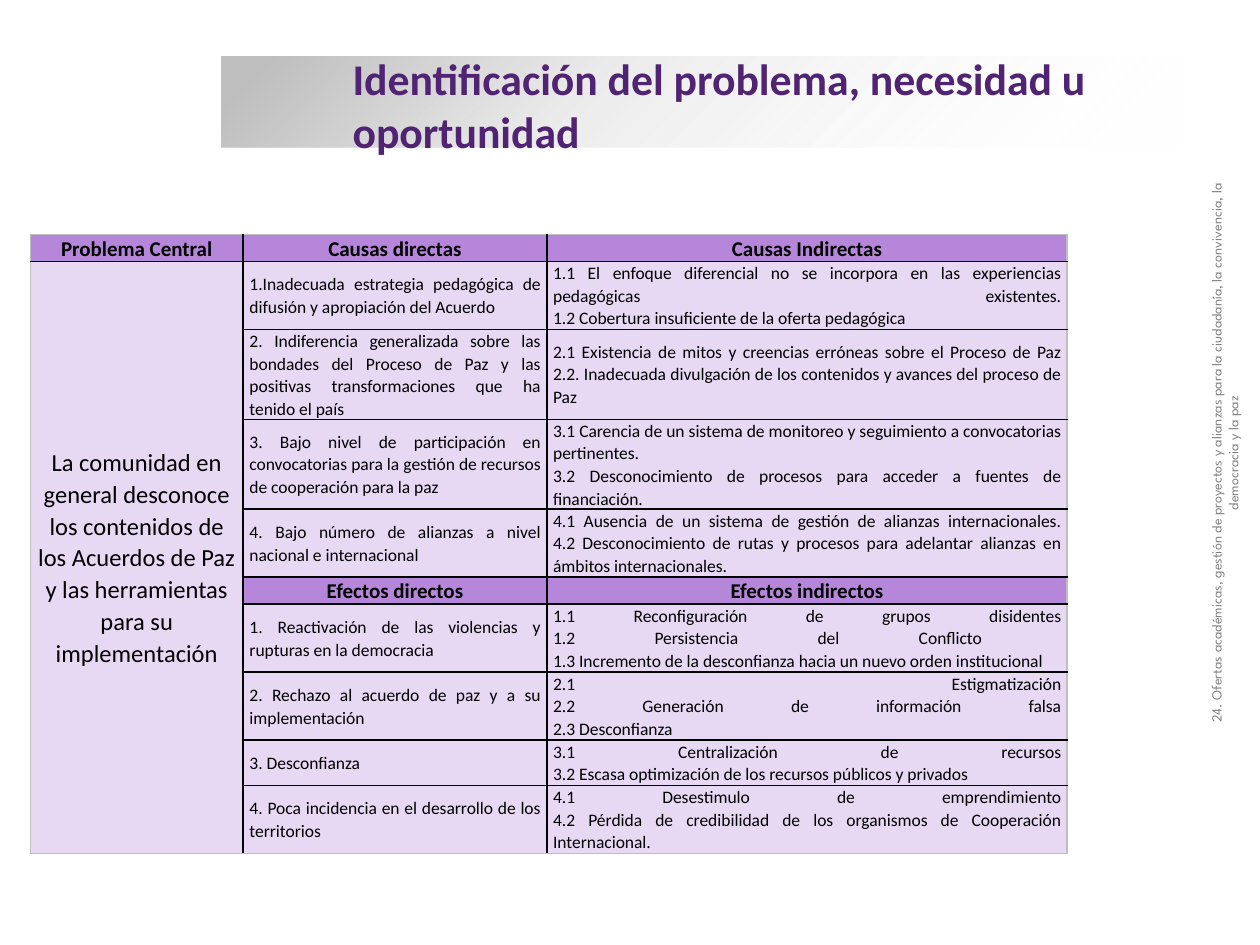
import pptx
import pptx.dml.color
import pptx.enum.shapes
import pptx.enum.text
import pptx.oxml
import pptx.oxml.ns
import pptx.util
from pptx.util import Inches

RGBColor = pptx.dml.color.RGBColor
PURPLE = RGBColor(0x51, 0x23, 0x73)
HEADER_FILL = RGBColor(0xB6, 0x86, 0xDA)
BODY_FILL = RGBColor(0xE7, 0xD8, 0xF4)
GRAY = RGBColor(0x80, 0x80, 0x80)
EDGE = RGBColor(0xBF, 0xBF, 0xBF)
BLACK = RGBColor(0, 0, 0)
WHITE = RGBColor(0xFF, 0xFF, 0xFF)
CENTER = pptx.enum.text.PP_ALIGN.CENTER
JUSTIFY = pptx.enum.text.PP_ALIGN.JUSTIFY
MIDDLE = pptx.enum.text.MSO_ANCHOR.MIDDLE
NAMESPACE = pptx.oxml.ns.nsdecls("a")


def style_font(paragraph, size, color, name="Calibri", bold=False):
    paragraph.font.size = pptx.util.Pt(size)
    paragraph.font.name = name
    paragraph.font.bold = bold
    paragraph.font.color.rgb = color


def add_border(cell, side, color):
    # Borders must come before the fill in the cell properties
    cell._tc.get_or_add_tcPr().append(pptx.oxml.parse_xml(
        f'<a:{side} {NAMESPACE} w="12700"><a:solidFill><a:srgbClr val="{color}"/>'
        f'</a:solidFill></a:{side}>'))


presentation = pptx.Presentation()
presentation.slide_width = Inches(10)
presentation.slide_height = Inches(7.5)
slide = presentation.slides.add_slide(presentation.slide_layouts[6])

# Title band, fading from gray to transparent white
band = slide.shapes.add_shape(
    pptx.enum.shapes.MSO_SHAPE.RECTANGLE,
    Inches(1.76), Inches(0.45), Inches(7.61), Inches(0.72))
band.shadow.inherit = False
band.line.fill.background()
stops = "".join(
    f'<a:gs pos="{position * 1000}"><a:srgbClr val="{color}">'
    f'<a:alpha val="{alpha * 1000}"/></a:srgbClr></a:gs>'
    for position, color, alpha in [(5, EDGE, 100), (37, EDGE, 31), (100, WHITE, 0)])
band._element.spPr.find(pptx.oxml.ns.qn("a:prstGeom")).addnext(pptx.oxml.parse_xml(
    f'<a:gradFill {NAMESPACE} rotWithShape="1"><a:gsLst>{stops}</a:gsLst>'
    '<a:lin ang="2700000" scaled="0"/></a:gradFill>'))

# Title
title = slide.shapes.add_textbox(Inches(2.7), Inches(0.34), Inches(6.75), Inches(0.98))
title.text_frame.word_wrap = True
title.text_frame.vertical_anchor = MIDDLE
paragraph = title.text_frame.paragraphs[0]
paragraph.text = "Identificación del problema, necesidad u oportunidad"
style_font(paragraph, 25, PURPLE, bold=True)

# Table of problem, causes and effects
HEADER_ROWS = (0, 5)
rows = [
    ("Causas directas", "Causas Indirectas"),
    ("1.Inadecuada estrategia pedagógica de difusión y apropiación del Acuerdo",
     "1.1 El enfoque diferencial no se incorpora en las experiencias pedagógicas existentes.\v"
     "1.2 Cobertura insuficiente de la oferta pedagógica"),
    ("2. Indiferencia generalizada sobre las bondades del Proceso de Paz y las positivas "
     "transformaciones que ha tenido el país",
     "2.1 Existencia de mitos y creencias erróneas sobre el Proceso de Paz\v"
     "2.2. Inadecuada divulgación de los contenidos y avances del proceso de Paz"),
    ("3. Bajo nivel de participación en convocatorias para la gestión de recursos de "
     "cooperación para la paz",
     "3.1 Carencia de un sistema de monitoreo y seguimiento a convocatorias pertinentes.\v"
     "3.2 Desconocimiento de procesos para acceder a fuentes de financiación."),
    ("4. Bajo número de alianzas a nivel nacional e internacional",
     "4.1 Ausencia de un sistema de gestión de alianzas internacionales.\v"
     "4.2 Desconocimiento de rutas y procesos para adelantar alianzas en ámbitos "
     "internacionales."),
    ("Efectos directos", "Efectos indirectos"),
    ("1. Reactivación de las violencias y rupturas en la democracia",
     "1.1 Reconfiguración de grupos disidentes\v1.2 Persistencia del Conflicto \v"
     "1.3 Incremento de la desconfianza hacia un nuevo orden institucional"),
    ("2. Rechazo al acuerdo de paz y a su implementación",
     "2.1 Estigmatización\v2.2 Generación de información falsa\v2.3 Desconfianza"),
    ("3. Desconfianza",
     "3.1 Centralización de recursos\v"
     "3.2 Escasa optimización de los recursos públicos y privados"),
    ("4. Poca incidencia en el desarrollo de los territorios",
     "4.1 Desestimulo de emprendimiento\v"
     "4.2 Pérdida de credibilidad de los organismos de Cooperación Internacional."),
]
problem_column = {
    0: "Problema Central",
    1: "La comunidad en general desconoce los contenidos de los Acuerdos de Paz y las "
       "herramientas para su implementación",
}
row_heights = [0.21, 0.54, 0.71, 0.71, 0.54, 0.21, 0.54, 0.54, 0.36, 0.54]
column_widths = [1.69, 2.41, 4.13]
last_row, last_column = len(rows) - 1, len(column_widths) - 1

table = slide.shapes.add_table(
    len(rows), len(column_widths), Inches(0.24), Inches(1.86),
    Inches(sum(column_widths)), Inches(sum(row_heights))).table
for column, width in zip(table.columns, column_widths):
    column.width = Inches(width)
for row, height in zip(table.rows, row_heights):
    row.height = Inches(height)
table.cell(1, 0).merge(table.cell(last_row, 0))

for row_index, row_texts in enumerate(rows):
    texts = (problem_column.get(row_index, ""), *row_texts)
    for column_index, text in enumerate(texts):
        cell = table.cell(row_index, column_index)
        in_problem = column_index == 0
        is_header = row_index in HEADER_ROWS and (row_index == 0 or not in_problem)
        cell.vertical_anchor = MIDDLE
        cell.margin_top = cell.margin_bottom = 0
        cell.margin_left = cell.margin_right = Inches(
            0.04 if is_header or in_problem else 0.05)
        for side, is_outer in [("lnL", column_index == 0),
                               ("lnR", column_index == last_column),
                               ("lnT", row_index == 0),
                               ("lnB", row_index == last_row or (in_problem and row_index > 0))]:
            add_border(cell, side, EDGE if is_outer else BLACK)
        cell.fill.solid()
        cell.fill.fore_color.rgb = HEADER_FILL if is_header else BODY_FILL
        paragraph = cell.text_frame.paragraphs[0]
        if text:
            paragraph.text = text
        paragraph.alignment = CENTER if is_header or in_problem else JUSTIFY
        paragraph.line_spacing = 1.07
        size = 12 if is_header else 14 if in_problem and text else 10
        style_font(paragraph, size, BLACK, bold=is_header)

# Vertical side caption
caption = slide.shapes.add_textbox(Inches(7.3), Inches(3.41), Inches(4.84), Inches(0.37))
caption.rotation = 270
caption.text_frame.word_wrap = True
paragraph = caption.text_frame.paragraphs[0]
paragraph.text = ("24. Ofertas académicas, gestión de proyectos y alianzas para la ciudadanía, "
                  "la convivencia, la democracia y la paz")
paragraph.alignment = CENTER
style_font(paragraph, 8, GRAY, name="League Spartan")

presentation.save("out.pptx")
